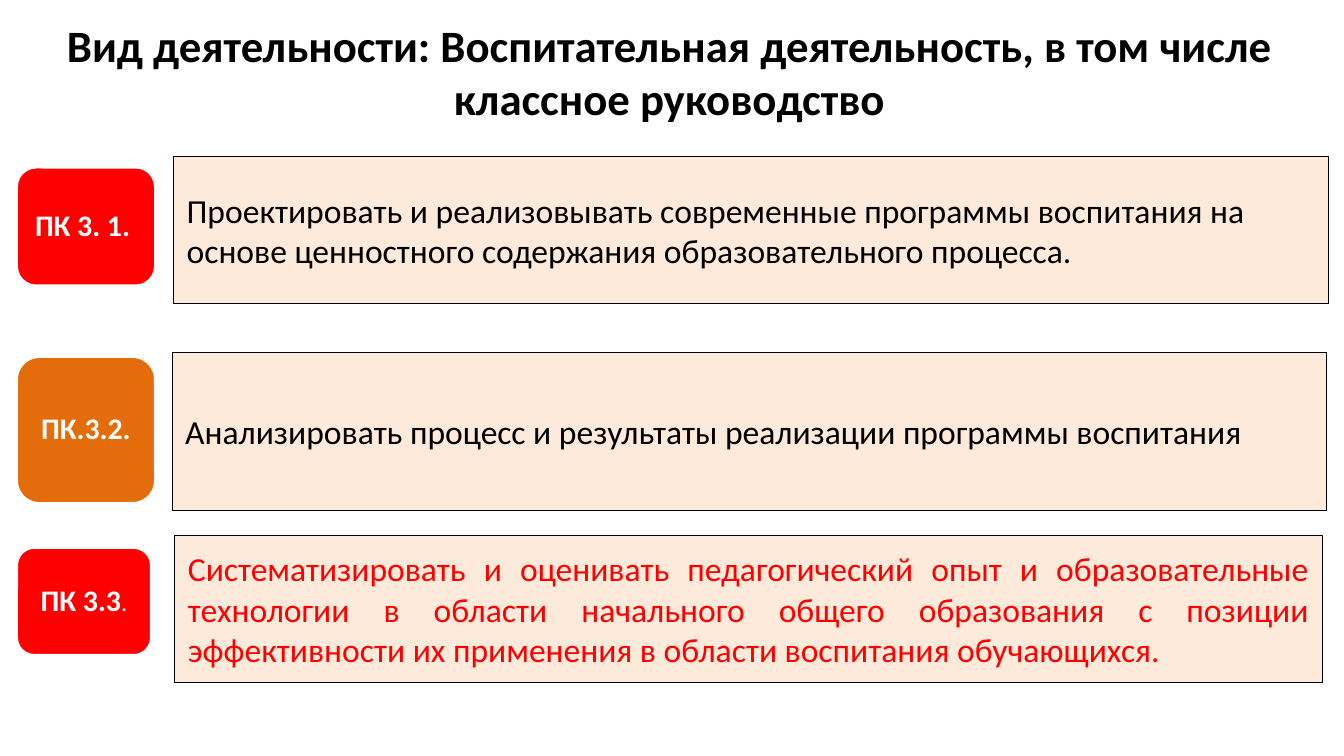
from pptx import Presentation
from pptx.dml.color import RGBColor
from pptx.enum.shapes import MSO_SHAPE
from pptx.enum.text import MSO_ANCHOR, PP_ALIGN
from pptx.util import Inches, Pt

TITLE = "Вид деятельности: Воспитательная деятельность, в том числе классное руководство"

# Badge box, badge colour, badge runs (text, size, bold)
BADGES = [
    ((0.12, 1.24, 1.04, 0.89), "FF0000", [("ПК 3. 1. ", 16, True)]),
    ((0.12, 2.65, 1.04, 1.1), "E46C0A", [("ПК.3.2.", 16, True)]),
    ((0.12, 4.07, 1.01, 0.81), "FF0000", [("ПК 3.3", 16, True), (".", 13, False)]),
]

# Panel box, text, text colour, alignment
PANELS = [
    ((1.29, 1.16, 8.59, 1.1),
     "Проектировать и реализовывать современные программы воспитания на основе "
     "ценностного содержания образовательного процесса.",
     "000000", PP_ALIGN.LEFT),
    ((1.28, 2.62, 8.59, 1.18),
     "Анализировать процесс и результаты реализации программы воспитания",
     "000000", PP_ALIGN.LEFT),
    ((1.3, 3.98, 8.54, 1.1),
     "Систематизировать и оценивать педагогический опыт и образовательные технологии "
     "в области начального общего образования с позиции эффективности их применения "
     "в области воспитания обучающихся.",
     "FF0000", PP_ALIGN.JUSTIFY),
]


def color(code):
    return RGBColor.from_string(code)


def write(shape, runs, ink, align):
    frame = shape.text_frame
    frame.word_wrap = True
    frame.vertical_anchor = MSO_ANCHOR.MIDDLE
    para = frame.paragraphs[0]
    para.alignment = align
    for text, size, bold in runs:
        run = para.add_run()
        run.text = text
        run.font.name = "Calibri"
        run.font.size = Pt(size)
        run.font.bold = bold
        run.font.color.rgb = color(ink)


def add_box(slide, kind, box, fill, line, width):
    shape = slide.shapes.add_shape(kind, *map(Inches, box))
    shape.shadow.inherit = False
    shape.fill.solid()
    shape.fill.fore_color.rgb = color(fill)
    shape.line.color.rgb = color(line)
    shape.line.width = Pt(width)
    return shape


def add_title(slide):
    box = slide.shapes.add_textbox(*map(Inches, (0, 0.06, 9.96, 0.94)))
    write(box, [(TITLE, 24, True)], "000000", PP_ALIGN.CENTER)


def add_badge(slide, box, fill, runs):
    badge = add_box(slide, MSO_SHAPE.ROUNDED_RECTANGLE, box, fill, "FFFFFF", 2)
    frame = badge.text_frame
    frame.margin_left = frame.margin_right = Inches(0.07)
    frame.margin_top = frame.margin_bottom = Inches(0.03)
    write(badge, runs, "FFFFFF", PP_ALIGN.CENTER)
    frame.paragraphs[0].line_spacing = 0.9


def add_panel(slide, box, text, ink, align):
    panel = add_box(slide, MSO_SHAPE.RECTANGLE, box, "FDEADA", "000000", 0.25)
    write(panel, [(text, 18, False)], ink, align)


def main():
    # Widescreen page, 16 to 9
    deck = Presentation()
    deck.slide_width = Inches(10)
    deck.slide_height = Inches(10 * 9 / 16)
    slide = deck.slides.add_slide(deck.slide_layouts[6])

    # Heading
    add_title(slide)

    # Competence codes on the left
    for badge in BADGES:
        add_badge(slide, *badge)

    # Descriptions on the right
    for panel in PANELS:
        add_panel(slide, *panel)

    deck.save("out.pptx")


if __name__ == "__main__":
    main()
